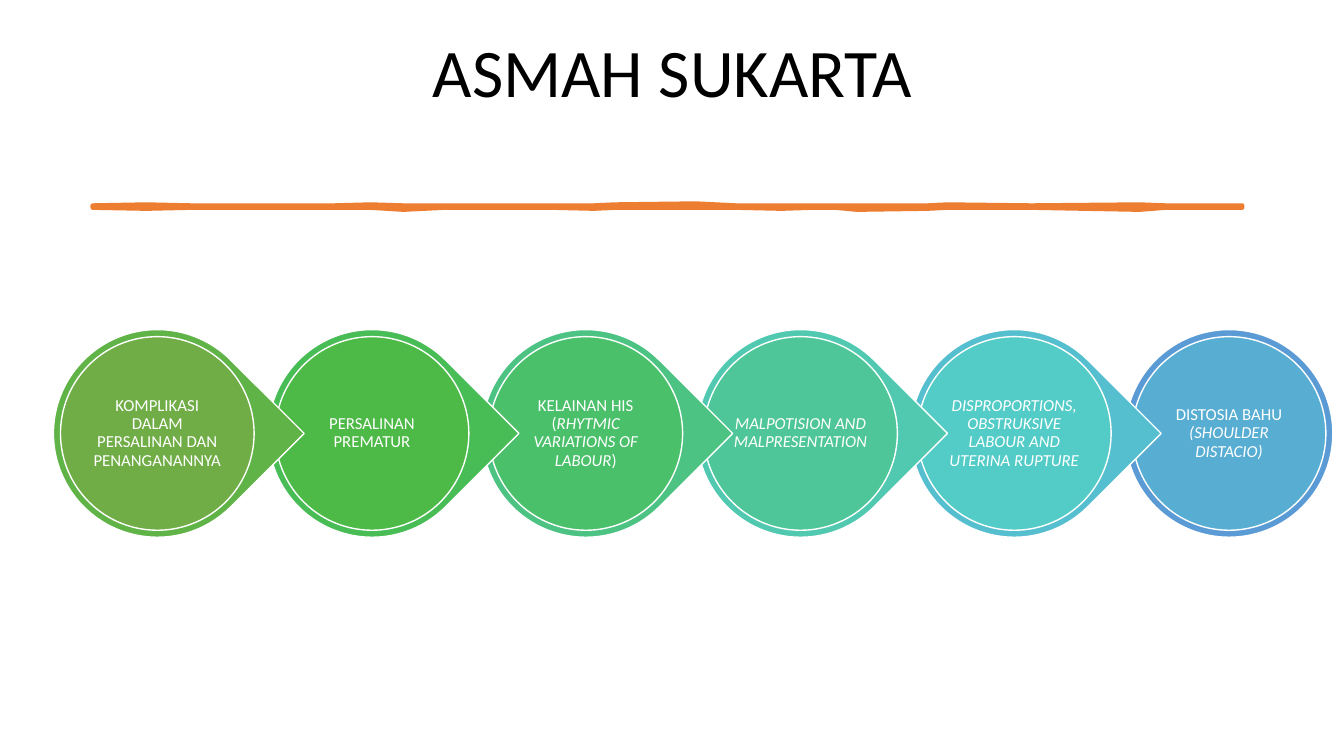
from pptx import Presentation
from pptx import util as u
from pptx.dml.color import RGBColor
from pptx.enum import shapes, text

PX = 9144  # 100 px to the inch
FONT = "Calibri"
TITLE = "ASMAH SUKARTA"

# Runs (text, italic), outer colour, inner colour
STEPS = [
    ([("KOMPLIKASI DALAM PERSALINAN DAN PENANGANANNYA", False)], "60B347", "70AD47"),
    ([("PERSALINAN PREMATUR", False)], "48BC55", "4DB946"),
    ([("KELAINAN HIS (", False), ("RHYTMIC VARIATIONS OF LABOUR", True), (")", False)],
     "4CC382", "4AC06B"),
    ([("MALPOTISION AND MALPRESENTATION", True)], "51C9B0", "4FC699"),
    ([("DISPROPORTIONS, OBSTRUKSIVE LABOUR AND UTERINA RUPTURE", True)],
     "56BFCF", "53CCC8"),
    ([("DISTOSIA BAHU ", False), ("(SHOULDER DISTACIO)", True)], "5B9BD5", "58ADD2"),
]

# Brush stroke: x, top edge, bottom edge
STROKE_COLOUR = "ED7D31"
STROKE = [
    (92, 204, 206), (145, 203, 207), (190, 204, 206), (235, 204, 206),
    (289, 204, 206), (331, 204, 206), (368, 203, 206), (400, 204, 208),
    (441, 204, 206), (506, 204, 206), (548, 204, 206), (589, 204, 207),
    (610, 203, 206), (690, 202, 206), (730, 204, 206), (775, 204, 207),
    (806, 204, 206), (829, 204, 206), (850, 204, 208), (920, 204, 207),
    (940, 203, 206), (1023, 204, 206), (1130, 203, 208), (1156, 204, 206),
    (1232, 204, 206),
]

STEP_LEFT, STEP_TOP, STEP_PITCH = 53, 327, 212.6
OUTER_SIZE, INNER_SIZE = 206, 192
TEXT_FRAME = dict(word_wrap=True, auto_size=text.MSO_AUTO_SIZE.NONE,
                  vertical_anchor=text.MSO_ANCHOR.MIDDLE)
NO_MARGINS = dict(margin_left=0, margin_right=0, margin_top=0, margin_bottom=0)
PARAGRAPH = dict(alignment=text.PP_ALIGN.CENTER, line_spacing=0.9)


def set_all(target, values):
    for name, value in values.items():
        setattr(target, name, value)


def colour(hex_string):
    return RGBColor.from_string(hex_string)


def paint(shape, fill, line, width):
    shape.shadow.inherit = False
    shape.fill.solid()
    shape.fill.fore_color.rgb = colour(fill)
    shape.line.color.rgb = colour(line)
    shape.line.width = u.Pt(width)


def write(shape, runs, size, hex_string, frame_format):
    set_all(shape.text_frame, frame_format)
    paragraph = shape.text_frame.paragraphs[0]
    set_all(paragraph, PARAGRAPH)
    for words, italic in runs:
        run = paragraph.add_run()
        run.text = words
        set_all(run.font, dict(name=FONT, size=u.Pt(size), italic=italic))
        run.font.color.rgb = colour(hex_string)


def add_disc(slide, kind, left, top, size, fill):
    disc = slide.shapes.add_shape(
        kind, *(round(value) * PX for value in (left, top, size, size)))
    paint(disc, fill, "FFFFFF", 1)
    return disc


def add_title(slide):
    title = slide.shapes.title
    set_all(title, dict(left=92 * PX, top=40 * PX, width=1150 * PX, height=70 * PX))
    write(title, [(TITLE, False)], 48.6, "000000", TEXT_FRAME)


def add_stroke(slide):
    upper = [(x, top) for x, top, bottom in STROKE]
    lower = [(x, bottom) for x, top, bottom in reversed(STROKE)]
    builder = slide.shapes.build_freeform(*upper[0], scale=PX)
    builder.add_line_segments(upper[1:] + lower, close=True)
    paint(builder.convert_to_shape(), STROKE_COLOUR, STROKE_COLOUR, 3.25)


def add_steps(slide):
    """Draw from right to left, so each point overlaps the next disc."""
    inset = (OUTER_SIZE - INNER_SIZE) / 2
    last = len(STEPS) - 1
    for index, (runs, outer, inner) in reversed(list(enumerate(STEPS))):
        left = STEP_LEFT + index * STEP_PITCH
        kind = shapes.MSO_SHAPE.OVAL if index == last else shapes.MSO_SHAPE.TEAR
        back = add_disc(slide, kind, left, STEP_TOP, OUTER_SIZE, outer)
        back.rotation = 0 if index == last else 45
        front = add_disc(slide, shapes.MSO_SHAPE.OVAL, left + inset,
                         STEP_TOP + inset, INNER_SIZE, inner)
        write(front, runs, 12, "FFFFFF", TEXT_FRAME | NO_MARGINS)


def main():
    presentation = Presentation()
    set_all(presentation, dict(slide_width=1333 * PX, slide_height=750 * PX))
    slide = presentation.slides.add_slide(presentation.slide_layouts[5])
    add_title(slide)
    add_stroke(slide)
    add_steps(slide)
    presentation.save("out.pptx")


if __name__ == "__main__":
    main()
